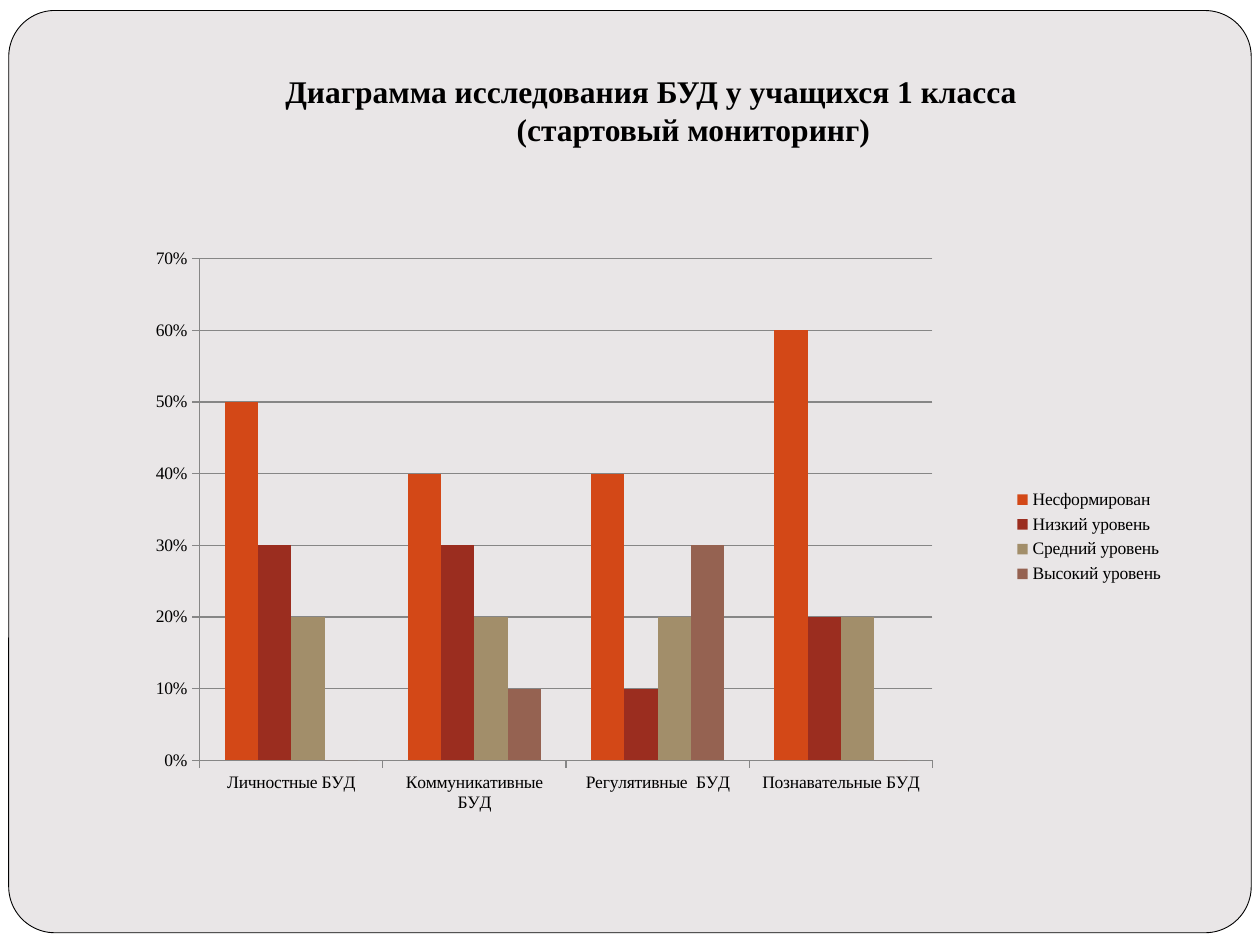
from lxml import etree
from pptx import Presentation
from pptx.chart.data import CategoryChartData
from pptx.dml.color import RGBColor
from pptx.enum.chart import XL_CHART_TYPE, XL_LEGEND_POSITION, XL_TICK_MARK
from pptx.enum.shapes import MSO_SHAPE
from pptx.enum.text import PP_ALIGN
from pptx.oxml.ns import qn
from pptx.util import Pt

COLUMN_CLUSTERED = XL_CHART_TYPE.COLUMN_CLUSTERED
LEGEND_RIGHT = XL_LEGEND_POSITION.RIGHT
TICK_OUTSIDE = XL_TICK_MARK.OUTSIDE
TICK_NONE = XL_TICK_MARK.NONE
RECTANGLE = MSO_SHAPE.RECTANGLE
ROUNDED_RECTANGLE = MSO_SHAPE.ROUNDED_RECTANGLE
CENTER = PP_ALIGN.CENTER

FONT = "Times New Roman"
COLORS = {
    "page": "FFFFFF",
    "panel": "E9E6E7",
    "text": "000000",
    "grid": "868686",
    "unformed": "D34817",
    "low": "9B2D1F",
    "medium": "A28E6A",
    "high": "956251",
}
TITLE_LINES = [
    "Диаграмма исследования БУД у учащихся 1 класса",
    " (стартовый мониторинг)",
]
CATEGORIES = [
    "Личностные БУД",
    "Коммуникативные БУД",
    "Регулятивные  БУД",
    "Познавательные БУД",
]
LEVELS = [
    ("Несформирован", (0.5, 0.4, 0.4, 0.6), "unformed"),
    ("Низкий уровень", (0.3, 0.3, 0.1, 0.2), "low"),
    ("Средний уровень", (0.2, 0.2, 0.2, 0.2), "medium"),
    ("Высокий уровень", (0, 0.1, 0.3, 0), "high"),
]
PLOT_LAYOUT = {"x": 0.08, "y": 0.04, "w": 0.69, "h": 0.83}


def color(name):
    """Return the palette colour with the given name."""
    return RGBColor.from_string(COLORS[name])


def style_font(font, size, bold=False):
    """Apply the slide typeface, size and text colour."""
    font.name = FONT
    font.size = Pt(size)
    font.bold = bold
    font.color.rgb = color("text")


def add_panel(slide, left, top, width, height):
    """Draw the white page and the rounded panel inset within it."""
    inset_x, inset_y = 5, 6
    page = slide.shapes.add_shape(RECTANGLE, Pt(left), Pt(top), Pt(width), Pt(height))
    panel = slide.shapes.add_shape(
        ROUNDED_RECTANGLE, Pt(left + inset_x), Pt(top + inset_y),
        Pt(width - 2 * inset_x), Pt(height - 13))
    panel.adjustments[0] = 0.05
    for shape, fill in ((page, "page"), (panel, "panel")):
        shape.shadow.inherit = False
        shape.fill.solid()
        shape.fill.fore_color.rgb = color(fill)
    page.line.fill.background()
    panel.line.color.rgb = color("text")
    panel.line.width = Pt(0.5)


def add_title(slide, left, top, width, height):
    """Write the two-line heading with its second line centred."""
    box = slide.shapes.add_textbox(Pt(left), Pt(top), Pt(width), Pt(height))
    text_frame = box.text_frame
    text_frame.word_wrap = True
    text_frame.text = "\n".join(TITLE_LINES)
    for paragraph in text_frame.paragraphs:
        style_font(paragraph.runs[0].font, 18, bold=True)
    text_frame.paragraphs[1].alignment = CENTER


def set_plot_layout(chart):
    """Fix the inner plot area as fractions of the chart box."""
    plot_area = chart._chartSpace.chart.plotArea
    for old_layout in plot_area.findall(qn("c:layout")):
        plot_area.remove(old_layout)
    layout = etree.Element(qn("c:layout"))
    manual = etree.SubElement(layout, qn("c:manualLayout"))
    settings = [("layoutTarget", "inner"), ("xMode", "edge"), ("yMode", "edge")]
    for tag, value in settings + list(PLOT_LAYOUT.items()):
        etree.SubElement(manual, qn(f"c:{tag}")).set("val", str(value))
    plot_area.insert(0, layout)


def add_level_chart(slide, left, top, width, height):
    """Chart the share of pupils at each level for every skill group."""
    data = CategoryChartData(number_format="0%")
    data.categories = CATEGORIES
    for name, values, _ in LEVELS:
        data.add_series(name, values)
    chart = slide.shapes.add_chart(
        COLUMN_CLUSTERED, Pt(left), Pt(top), Pt(width), Pt(height), data).chart
    chart.has_title = False
    style_font(chart.font, 10)
    set_plot_layout(chart)

    plot = chart.plots[0]
    plot.gap_width = 150
    plot.overlap = 0
    plot.vary_by_categories = False
    for series, (_, _, fill) in zip(plot.series, LEVELS):
        series.invert_if_negative = False
        series.format.fill.solid()
        series.format.fill.fore_color.rgb = color(fill)

    value_axis = chart.value_axis
    value_axis.minimum_scale = 0
    value_axis.maximum_scale = 0.7
    value_axis.major_unit = 0.1
    value_axis.has_major_gridlines = True
    value_axis.tick_labels.number_format = "0%"
    value_axis.tick_labels.number_format_is_linked = False
    for axis in (chart.category_axis, value_axis):
        axis.major_tick_mark = TICK_OUTSIDE
        axis.minor_tick_mark = TICK_NONE
    for part in (chart.category_axis, value_axis, value_axis.major_gridlines):
        part.format.line.color.rgb = color("grid")
        part.format.line.width = Pt(0.75)

    chart.has_legend = True
    chart.legend.position = LEGEND_RIGHT
    chart.legend.include_in_layout = False


def main():
    """Build and save the slide."""
    presentation = Presentation()
    presentation.slide_width = Pt(720)
    presentation.slide_height = Pt(540)
    slide = presentation.slides.add_slide(presentation.slide_layouts[6])
    slide.background.fill.solid()
    slide.background.fill.fore_color.rgb = color("panel")
    add_panel(slide, 0, 0, 720, 540)
    add_level_chart(slide, 65.5, 134, 607, 345.5)
    add_title(slide, 156, 37.5, 476, 51)
    presentation.save("out.pptx")


if __name__ == "__main__":
    main()
